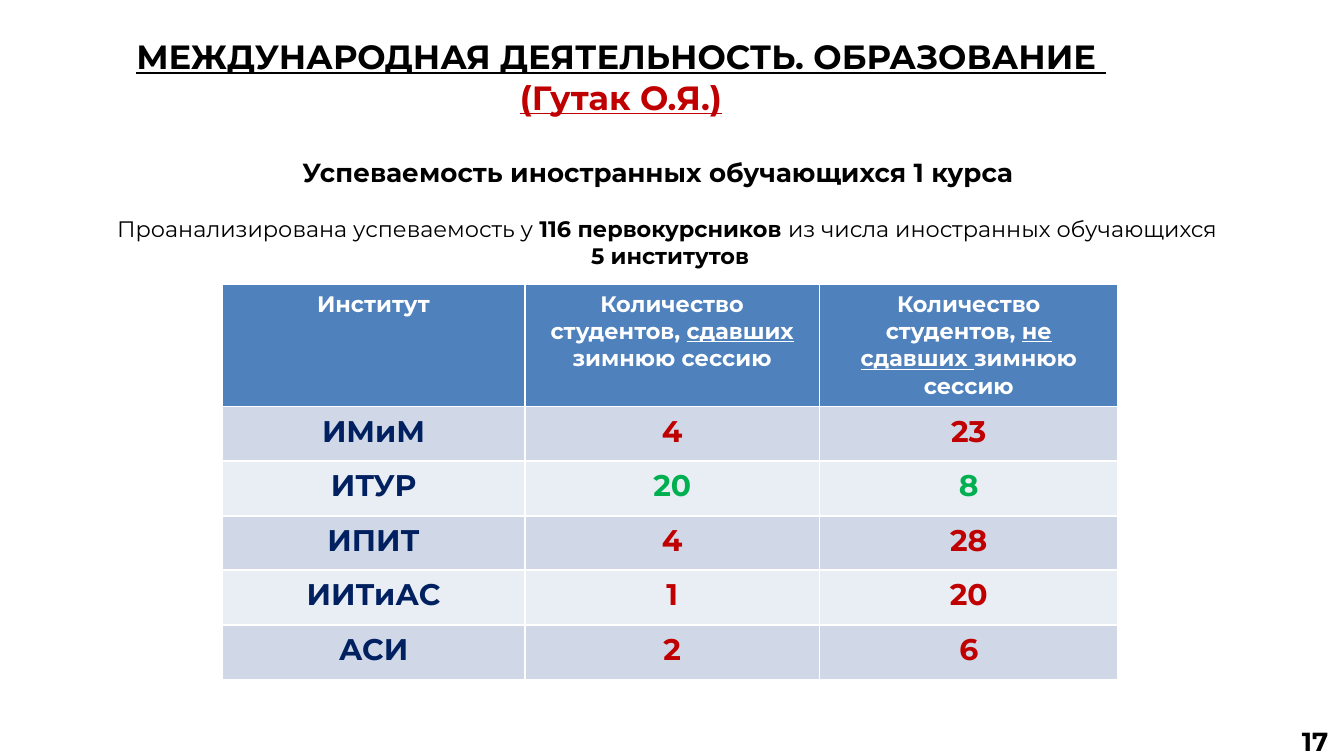
"""Build the slide on first-year international students' exam results."""
from pptx import Presentation
from pptx.dml.color import RGBColor
from pptx.enum.text import MSO_ANCHOR, MSO_AUTO_SIZE, PP_ALIGN
from pptx.util import Pt

BLACK = RGBColor(0x00, 0x00, 0x00)
WHITE = RGBColor(0xFF, 0xFF, 0xFF)
RED = RGBColor(0xC0, 0x00, 0x00)
GREEN = RGBColor(0x00, 0xB0, 0x50)
NAVY = RGBColor(0x00, 0x20, 0x60)
HEADER_BLUE = RGBColor(0x4F, 0x81, 0xBD)
BANDS = (RGBColor(0xD0, 0xD8, 0xE8), RGBColor(0xE9, 0xED, 0xF4))

BASE = {"name": "Montserrat", "size": Pt(12), "bold": False, "underline": False}
BOLD = {**BASE, "bold": True}
UNDERLINED = {**BOLD, "underline": True}
HEADING = {**UNDERLINED, "size": Pt(18)}
SUBHEADING = {**BOLD, "size": Pt(14)}
FIGURE = {**BOLD, "size": Pt(16)}

TITLE = [
    [("МЕЖДУНАРОДНАЯ ДЕЯТЕЛЬНОСТЬ. ОБРАЗОВАНИЕ ", HEADING, BLACK)],
    [("(Гутак О.Я.)", HEADING, RED)],
]
SUBTITLE = [[("Успеваемость иностранных обучающихся 1 курса", SUBHEADING, BLACK)]]
SUMMARY = [
    [
        ("Проанализирована успеваемость у ", BASE, BLACK),
        ("116 первокурсников ", BOLD, BLACK),
        ("из числа иностранных обучающихся ", BASE, BLACK),
    ],
    [("5 институтов", BOLD, BLACK)],
]
PAGE_NUMBER = [[("17", SUBHEADING, BLACK)]]
COLUMN_HEADS = [("Институт", "", ""),
                ("Количество студентов, ", "сдавших ", "зимнюю сессию"),
                ("Количество студентов, ", "не сдавших ", "зимнюю сессию")]
RESULTS = [
    ("ИМиМ", 4, 23, RED),
    ("ИТУР", 20, 8, GREEN),
    ("ИПИТ", 4, 28, RED),
    ("ИИТиАС", 1, 20, RED),
    ("АСИ", 2, 6, RED),
]
COLUMN_WIDTHS = (162.2, 157.8, 160)
ROW_HEIGHT = 29.25
TABLE_LEFT, TABLE_TOP = 119, 152


def write(frame, paragraphs, line_spacing=1.0):
    for index, runs in enumerate(paragraphs):
        paragraph = frame.paragraphs[0] if index == 0 else frame.add_paragraph()
        paragraph.alignment = PP_ALIGN.CENTER
        paragraph.line_spacing = line_spacing
        for text, formatting, color in runs:
            run = paragraph.add_run()
            run.text = text
            for attribute, value in formatting.items():
                setattr(run.font, attribute, value)
            run.font.color.rgb = color


def place(part, left, top, width, height, paragraphs, line_spacing=1.0):
    part.left, part.top, part.width, part.height = map(Pt, (left, top, width, height))
    frame = part.text_frame
    frame.word_wrap = True
    frame.auto_size = MSO_AUTO_SIZE.NONE
    frame.vertical_anchor = MSO_ANCHOR.TOP
    write(frame, paragraphs, line_spacing)


def add_text(slide, *placement):
    place(slide.shapes.add_textbox(0, 0, 0, 0), *placement)


def add_results(slide):
    rows = [[[(head, BOLD, WHITE), (marked, UNDERLINED, WHITE), (tail, BOLD, WHITE)]
             for head, marked, tail in COLUMN_HEADS]]
    for institute, passed, failed, color in RESULTS:
        rows.append([[(institute, FIGURE, NAVY)],
                     [(str(passed), FIGURE, color)],
                     [(str(failed), FIGURE, color)]])
    table = slide.shapes.add_table(
        len(rows), len(COLUMN_WIDTHS), Pt(TABLE_LEFT), Pt(TABLE_TOP),
        Pt(sum(COLUMN_WIDTHS)), Pt(ROW_HEIGHT * len(rows))).table
    for column, width in zip(table.columns, COLUMN_WIDTHS):
        column.width = Pt(width)
    for row_index, row in enumerate(rows):
        table.rows[row_index].height = Pt(ROW_HEIGHT)
        for column_index, runs in enumerate(row):
            cell = table.cell(row_index, column_index)
            cell.fill.solid()
            cell.fill.fore_color.rgb = BANDS[(row_index - 1) % 2] if row_index else HEADER_BLUE
            write(cell.text_frame, [[run for run in runs if run[0]]])


def main():
    presentation = Presentation()
    presentation.slide_width, presentation.slide_height = Pt(720), Pt(405)
    slide = presentation.slides.add_slide(presentation.slide_layouts[5])
    place(slide.shapes.title, 9.4, 15.8, 646.6, 51, TITLE)
    add_text(slide, 13, 111.6, 692, 80, SUMMARY)
    add_text(slide, 689, 385.2, 31, 21, PAGE_NUMBER)
    add_text(slide, 9.4, 72, 686.2, 29.5, SUBTITLE, 1.5)
    add_results(slide)
    presentation.save("out.pptx")


if __name__ == "__main__":
    main()
